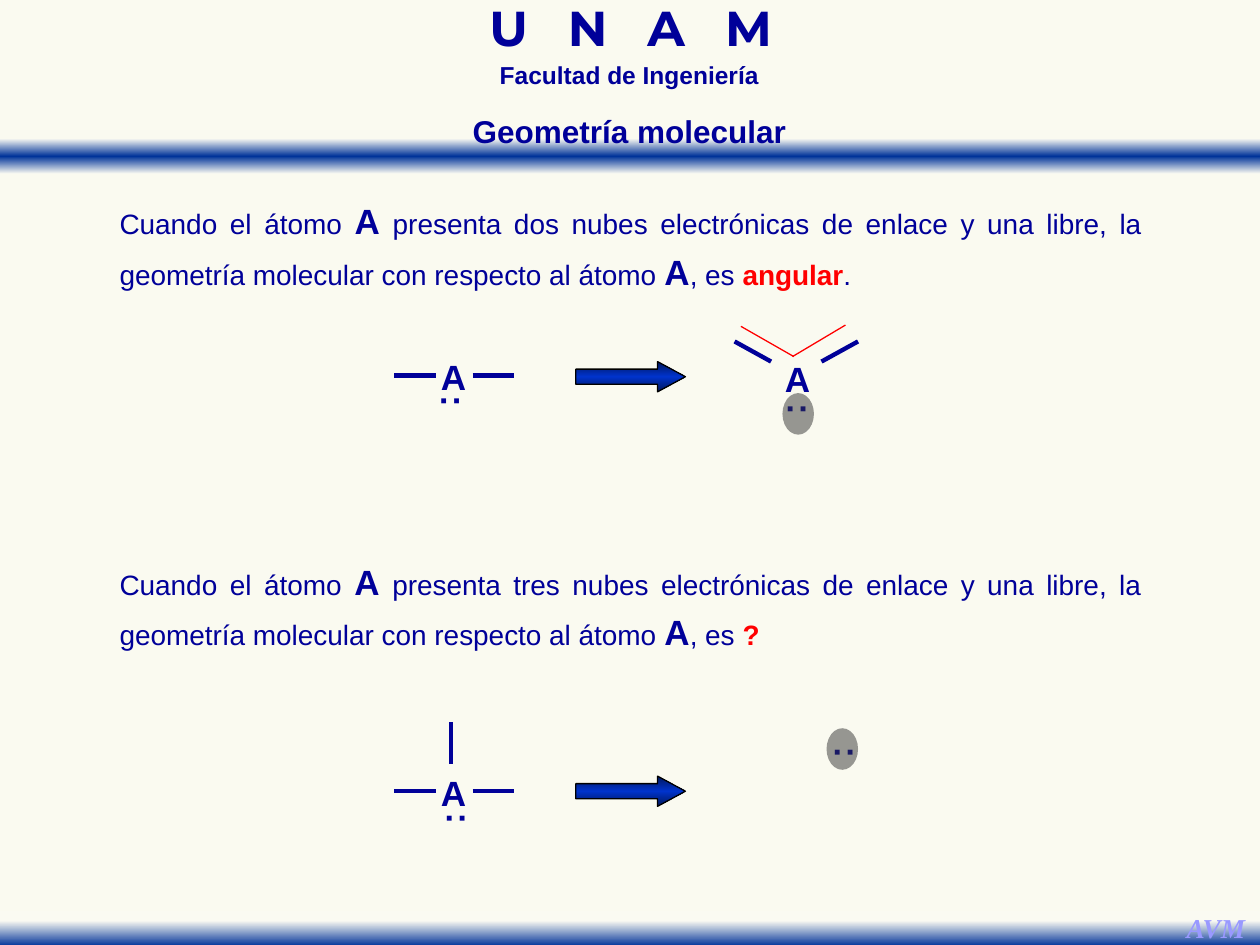
from pptx import Presentation
from pptx.dml.color import RGBColor
from pptx.enum.shapes import MSO_CONNECTOR as CONN, MSO_SHAPE as SHAPE
from pptx.enum.text import MSO_ANCHOR, MSO_AUTO_SIZE, PP_ALIGN as AL
from pptx.oxml.ns import qn
from pptx.util import Inches, Pt
from lxml.etree import SubElement

C = {"paper": "FAFAF0", "fade": "FAFAF2", "bar": "003399", "navy": "000099",
     "lilac": "9999FF", "red": "FF0000", "dark": "00175C", "blue": "0033CC",
     "black": "000000", "cloud": "333333"}

BARS = [(1.1, [(0, "fade"), (50, "bar"), (100, "fade")]),
        (7.23, [(28, "fade"), (100, "bar")])]
ARROW_STOPS = [(0, "dark"), (50, "blue"), (100, "dark")]
ARROW_TOPS = [2.87, 6.16]

STATEMENTS = [(1.47, "dos", [("angular", 16, "red", True), (".", 16, "navy", False)]),
              (4.33, "tres", [("?", 16, "red", True)])]

ATOMS = [(3.5, 2.82), (6.23, 2.84), (3.5, 6.12)]
PAIRS = [(3.47, 2.97, 90), (6.22, 3.03, 90), (3.43, 6.28, 270), (6.51, 5.76, 270)]
CLOUDS = [(6.21, 3.12), (6.56, 5.78)]
BONDS = [(3.75, 2.98, 4.08, 2.98), (3.13, 2.98, 3.46, 2.98),
         (6.52, 2.87, 6.81, 2.71), (6.12, 2.87, 5.83, 2.71),
         (3.75, 6.28, 4.08, 6.28), (3.13, 6.28, 3.46, 6.28),
         (3.58, 6.06, 3.58, 5.73)]
ANGLE = [(6.3, 2.83, 5.88, 2.59), (6.29, 2.83, 6.71, 2.58)]


def rgb(name):
    return RGBColor.from_string(C[name])


def write(tf, runs, align, font="Arial", spacing=None, wrap=True):
    tf.word_wrap = wrap
    p = tf.paragraphs[0]
    p.alignment = align
    if spacing:
        p.line_spacing = spacing
    for text, size, color, bold in runs:
        r = p.add_run()
        r.text = text
        f = r.font
        f.name, f.size, f.bold = font, Pt(size), bold
        f.color.rgb = rgb(color)
    return p


def add_text(s, box, runs, align, **style):
    tb = s.shapes.add_textbox(*map(Inches, box))
    write(tb.text_frame, runs, align, **style)
    return tb


def add_shape(s, kind, box):
    sp = s.shapes.add_shape(kind, *map(Inches, box))
    sp.shadow.inherit = False
    sp.line.fill.background()
    return sp


def shade(sp, stops):
    sp.fill.gradient()
    sp.fill.gradient_angle = 270
    gs_list = sp.element.spPr.find(".//" + qn("a:gsLst"))
    for gs in list(gs_list):
        gs_list.remove(gs)
    for pos, color in stops:
        gs = SubElement(gs_list, qn("a:gs"), pos=str(pos * 1000))
        SubElement(gs, qn("a:srgbClr"), val=C[color])


def add_line(s, ends, color, width):
    ln = s.shapes.add_connector(CONN.STRAIGHT, *map(Inches, ends))
    ln.line.color.rgb = rgb(color)
    ln.line.width = Pt(width)
    SubElement(ln.element.spPr, qn("a:effectLst"))


def add_header(s):
    for top, stops in BARS:
        shade(add_shape(s, SHAPE.RECTANGLE, (0, top, 10, 0.28)), stops)
    letters = [("U N A ", 28, "navy", True), ("M", 28, "navy", True)]
    tb = add_text(s, (3.05, 0.06, 3.91, 0.43), letters, AL.CENTER,
                  font="Montserrat", spacing=0.7)
    tb.text_frame.paragraphs[0].runs[0].font._element.set("spc", "750")
    add_text(s, (3.21, 0.49, 3.57, 0.27), [("Facultad de Ingeniería", 14, "navy", True)],
             AL.CENTER, spacing=0.7)
    tb = add_text(s, (9.31, 7.18, 0.68, 0.37), [("AVM", 15.6, "lilac", True)],
                  AL.CENTER, font="Times New Roman", wrap=False)
    tb.text_frame.paragraphs[0].runs[0].font.italic = True


def add_statements(s):
    atom = ("A", 20, "navy", True)
    for top, count, ending in STATEMENTS:
        middle = (f" presenta {count} nubes electrónicas de enlace y una libre, "
                  "la geometría molecular con respecto al átomo ")
        runs = [("Cuando el átomo ", 16, "navy", False), atom,
                (middle, 16, "navy", False), atom, (", es ", 16, "navy", False)]
        add_text(s, (0.85, top, 8.31, 0.87), runs + ending, AL.JUSTIFY, spacing=1.2)


def add_molecules(s):
    for x, y in ATOMS:
        tf = add_text(s, (x, y, 0.2, 0.33), [("A", 20, "navy", True)],
                      AL.JUSTIFY, wrap=False).text_frame
        tf.margin_left = tf.margin_right = tf.margin_top = tf.margin_bottom = 0
    for ends in BONDS:
        add_line(s, ends, "navy", 2.5)
    for x, y, turn in PAIRS:
        add_text(s, (x, y, 0.29, 0.43), [(":", 20, "navy", True)],
                 AL.JUSTIFY, wrap=False).rotation = turn
    for x, y in CLOUDS:
        sp = add_shape(s, SHAPE.OVAL, (x, y, 0.25, 0.33))
        sp.fill.solid()
        sp.fill.fore_color.rgb = rgb("cloud")
        color = sp.element.spPr.find(qn("a:solidFill")).find(qn("a:srgbClr"))
        SubElement(color, qn("a:alpha"), val="50000")
    for ends in ANGLE:
        add_line(s, ends, "red", 0.75)
    for top in ARROW_TOPS:
        sp = add_shape(s, SHAPE.RIGHT_ARROW, (4.57, top, 0.87, 0.24))
        sp.adjustments[0], sp.adjustments[1] = 0.5, 0.92
        shade(sp, ARROW_STOPS)
        sp.line.color.rgb = rgb("black")
        sp.line.width = Pt(0.75)


def add_title(s):
    title = s.shapes.title
    title.left, title.top, title.width, title.height = map(Inches, (3.64, 0.84, 2.71, 0.4))
    tf = title.text_frame
    tf.auto_size = MSO_AUTO_SIZE.NONE
    tf.vertical_anchor = MSO_ANCHOR.TOP
    write(tf, [("Geometría molecular", 18, "navy", True)], AL.CENTER, wrap=False)
    s.shapes.element.append(title.element)


def main():
    """Build the slide on molecular geometry."""
    prs = Presentation()
    prs.slide_width, prs.slide_height = Inches(10), Inches(7.5)
    s = prs.slides.add_slide(prs.slide_layouts[5])
    s.background.fill.solid()
    s.background.fill.fore_color.rgb = rgb("paper")
    add_header(s)
    add_statements(s)
    add_molecules(s)
    add_title(s)
    prs.save("out.pptx")


if __name__ == "__main__":
    main()
